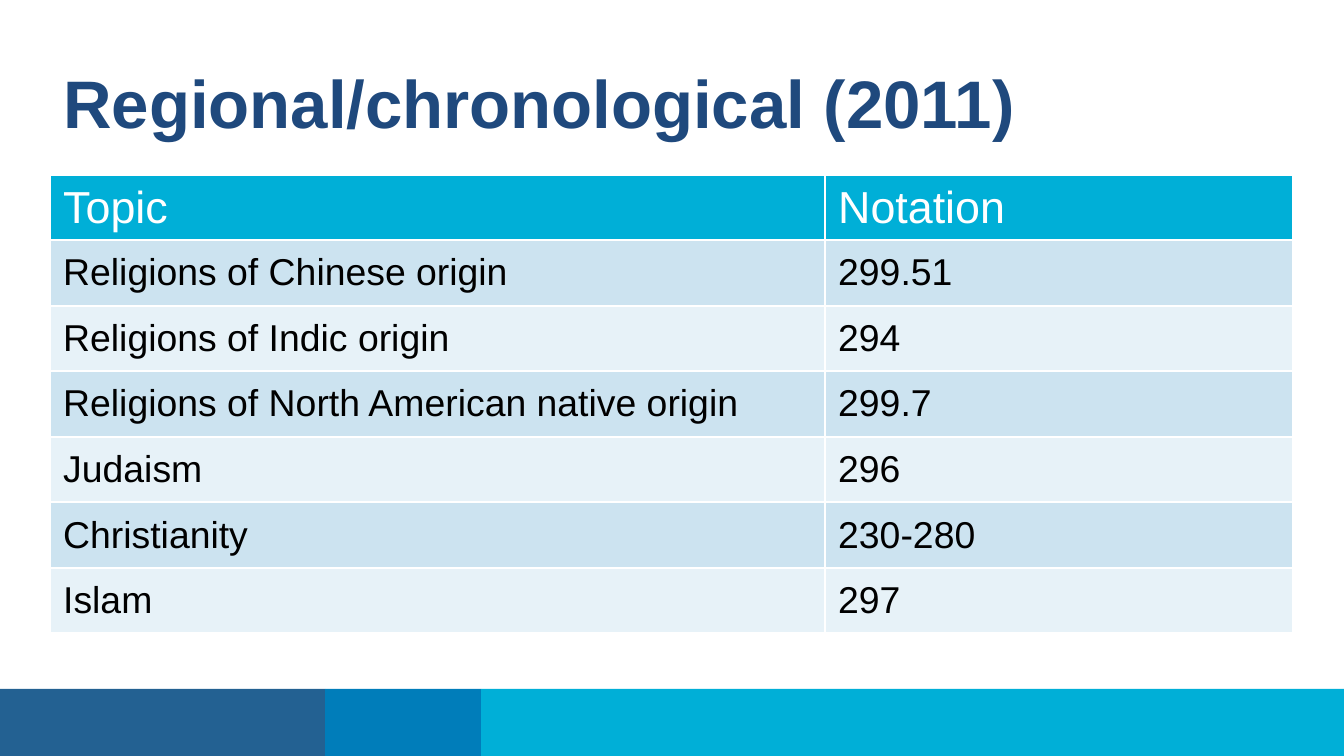
from pptx import Presentation
from pptx.dml.color import RGBColor
from pptx.enum.shapes import MSO_SHAPE as Shape
from pptx.enum.text import MSO_ANCHOR as Anchor, MSO_AUTO_SIZE as AutoSize, PP_ALIGN as Align
from pptx.oxml import parse_xml
from pptx.oxml.ns import nsdecls
from pptx.util import Pt

WHITE = "FFFFFF"
CYAN = "00AFD7"
LEFT = 26.64
BAND_FILLS = ("CCE3F0", "E7F2F8")
FOOTER_BARS = (("236192", 174.24), ("007DBA", 83.52), (CYAN, 462.24))
COLUMN_WIDTHS = (415.2, 251)
ROW_HEIGHT = 35.1
ROWS = (
    ("Topic", "Notation"),
    ("Religions of Chinese origin", "299.51"),
    ("Religions of Indic origin", "294"),
    ("Religions of North American native origin", "299.7"),
    ("Judaism", "296"),
    ("Christianity", "230-280"),
    ("Islam", "297"),
)


def color(value):
    return RGBColor.from_string(value)


def format_runs(para, size, text_color, bold=False):
    for span in para.runs:
        span.font.name = "Arial"
        span.font.size = Pt(size)
        span.font.bold = bold
        span.font.color.rgb = color(text_color)


def add_footer(page):
    left = 0
    for fill, width in FOOTER_BARS:
        bar = page.shapes.add_shape(Shape.RECTANGLE, Pt(left), Pt(369), Pt(width), Pt(36))
        bar.shadow.inherit = False
        bar.fill.solid()
        bar.fill.fore_color.rgb = color(fill)
        bar.line.fill.background()
        left += width


def set_title(page, text):
    title = page.shapes.title
    title.left, title.top, title.width, title.height = Pt(LEFT), Pt(27.36), Pt(664.56), Pt(54)
    frame = title.text_frame
    frame.text = text
    frame.auto_size = AutoSize.NONE
    frame.vertical_anchor = Anchor.MIDDLE
    para = frame.paragraphs[0]
    para.alignment = Align.LEFT
    format_runs(para, 36, "1F497D", bold=True)


def add_borders(cell):
    properties = cell._tc.get_or_add_tcPr()
    for side in ("lnL", "lnR", "lnT", "lnB"):
        properties.append(parse_xml(
            f'<a:{side} {nsdecls("a")} w="{Pt(1)}"><a:solidFill>'
            f'<a:srgbClr val="{WHITE}"/></a:solidFill></a:{side}>'))


def format_cell(cell, text, fill, size, text_color):
    cell.text = text
    cell.vertical_anchor = Anchor.MIDDLE
    add_borders(cell)
    cell.fill.solid()
    cell.fill.fore_color.rgb = color(fill)
    format_runs(cell.text_frame.paragraphs[0], size, text_color)


def add_notation_table(page):
    frame = page.shapes.add_table(
        len(ROWS), len(COLUMN_WIDTHS), Pt(LEFT), Pt(93.6),
        Pt(sum(COLUMN_WIDTHS)), Pt(ROW_HEIGHT * len(ROWS)))
    table = frame.table
    for column, width in zip(table.columns, COLUMN_WIDTHS):
        column.width = Pt(width)
    for index, texts in enumerate(ROWS):
        table.rows[index].height = Pt(ROW_HEIGHT)
        if index == 0:
            style = (CYAN, 24, WHITE)
        else:
            style = (BAND_FILLS[(index - 1) % 2], 20, "000000")
        for cell, text in zip(table.rows[index].cells, texts):
            format_cell(cell, text, *style)


def main():
    deck = Presentation()
    deck.slide_width, deck.slide_height = Pt(720), Pt(405)
    page = deck.slides.add_slide(deck.slide_layouts[5])
    add_footer(page)
    set_title(page, "Regional/chronological (2011)")
    add_notation_table(page)
    deck.save("out.pptx")


if __name__ == "__main__":
    main()
